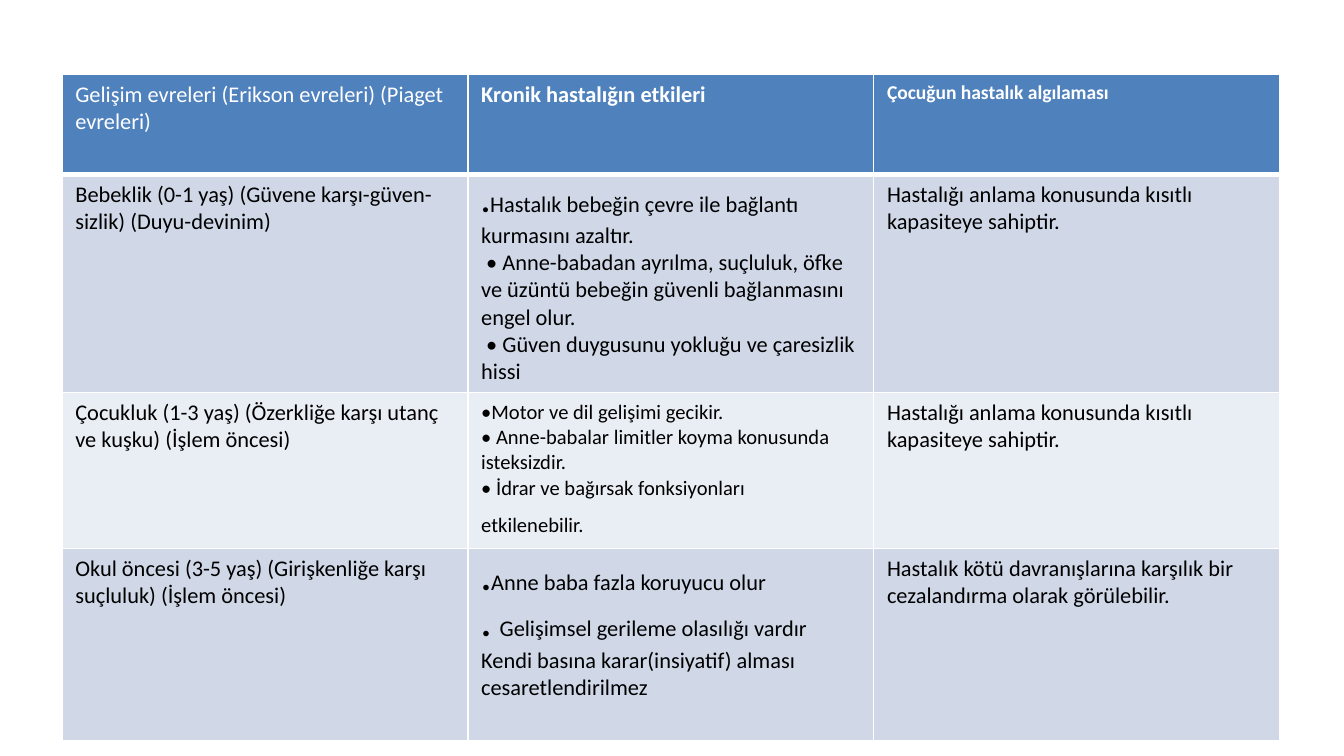
from lxml.etree import SubElement
from pptx import Presentation
from pptx.dml.color import RGBColor
from pptx.oxml.ns import qn
from pptx.util import Cm, Pt

THEME = {
    "font": "Calibri",
    "body": 12, "small": 11, "minor_head": 10.5, "dot": 18, "big_dot": 20,
    "head_fill": "4F81BD", "bands": ("D0D8E8", "E9EDF4"),
    "head_text": "FFFFFF", "text": "000000", "border": "FFFFFF",
    "line": 1, "head_line": 3,
}

LEFT, TOP = 1.17, 1.41
COL_WIDTH = 7.67
ROW_HEIGHTS = (1.88, 2.67, 2.11, 3.63)


def run(text, size="body", bold=False):
    return text, size, bold


LIMITED = [[run("Hastalığı anlama konusunda kısıtlı kapasiteye sahiptir.")]]

# Rows of cells; a cell is a list of paragraphs, a paragraph a list of runs.
ROWS = [
    [
        [[run("Gelişim evreleri (Erikson evreleri) (Piaget evreleri)")]],
        [[run("Kronik hastalığın etkileri", bold=True)]],
        [[run("Çocuğun hastalık algılaması", "minor_head", True)]],
    ],
    [
        [[run("Bebeklik (0-1 yaş) (Güvene karşı-güven- sizlik) (Duyu-devinim)")]],
        [
            [run(".", "dot", True),
             run("Hastalık bebeğin çevre ile bağlantı kurmasını azaltır.")],
            [run(" • Anne-babadan ayrılma, suçluluk, öfke ve üzüntü bebeğin "
                 "güvenli bağlanmasını engel olur.")],
            [run(" • Güven duygusunu yokluğu ve çaresizlik hissi")],
        ],
        LIMITED,
    ],
    [
        [[run("Çocukluk (1-3 yaş) (Özerkliğe karşı utanç ve kuşku) (İşlem öncesi)")]],
        [
            [run("•Motor ve dil gelişimi gecikir. ", "small")],
            [run("• Anne-babalar limitler koyma konusunda isteksizdir.", "small")],
            [run("• İdrar ve bağırsak fonksiyonları   etkilenebilir.", "small"),
             run(" ", "dot")],
        ],
        LIMITED,
    ],
    [
        [[run("Okul öncesi (3-5 yaş) (Girişkenliğe karşı suçluluk) (İşlem öncesi)")]],
        [
            [run(".", "big_dot", True), run("Anne baba fazla koruyucu olur")],
            [run(". ", "big_dot", True), run("Gelişimsel gerileme olasılığı vardır")],
            [run("Kendi basına karar(insiyatif) alması cesaretlendirilmez")],
        ],
        [[run("Hastalık kötü davranışlarına karşılık bir cezalandırma olarak "
              "görülebilir.")]],
    ],
]


def set_borders(cell, top, bottom):
    """Draw the four cell borders; must run before the fill is set."""
    tc_pr = cell._tc.get_or_add_tcPr()
    widths = {"L": THEME["line"], "R": THEME["line"], "T": top, "B": bottom}
    for side, width in widths.items():
        ln = SubElement(tc_pr, qn(f"a:ln{side}"), w=str(Pt(width)))
        fill = SubElement(ln, qn("a:solidFill"))
        SubElement(fill, qn("a:srgbClr"), val=THEME["border"])


def write_cell(cell, paragraphs, color):
    tf = cell.text_frame
    for i, runs in enumerate(paragraphs):
        p = tf.add_paragraph() if i else tf.paragraphs[0]
        for text, size, bold in runs:
            r = p.add_run()
            r.text = text
            r.font.name = THEME["font"]
            r.font.size = Pt(THEME[size])
            r.font.bold = bold
            r.font.color.rgb = RGBColor.from_string(color)


def add_stage_table(slide):
    n_cols = len(ROWS[0])
    table = slide.shapes.add_table(
        len(ROWS), n_cols, Cm(LEFT), Cm(TOP),
        Cm(COL_WIDTH * n_cols), Cm(sum(ROW_HEIGHTS))).table
    for col in table.columns:
        col.width = Cm(COL_WIDTH)
    for i, (cells, height) in enumerate(zip(ROWS, ROW_HEIGHTS)):
        table.rows[i].height = Cm(height)
        is_head = i == 0
        fill = THEME["head_fill"] if is_head else THEME["bands"][(i - 1) % 2]
        color = THEME["head_text"] if is_head else THEME["text"]
        top = THEME["head_line"] if i == 1 else THEME["line"]
        bottom = THEME["head_line"] if is_head else THEME["line"]
        for j, paragraphs in enumerate(cells):
            cell = table.cell(i, j)
            set_borders(cell, top, bottom)
            cell.fill.solid()
            cell.fill.fore_color.rgb = RGBColor.from_string(fill)
            write_cell(cell, paragraphs, color)


def main():
    prs = Presentation()
    prs.slide_width, prs.slide_height = Cm(25.4), Cm(14.28)
    slide = prs.slides.add_slide(prs.slide_layouts[6])
    add_stage_table(slide)
    prs.save("out.pptx")


if __name__ == "__main__":
    main()
